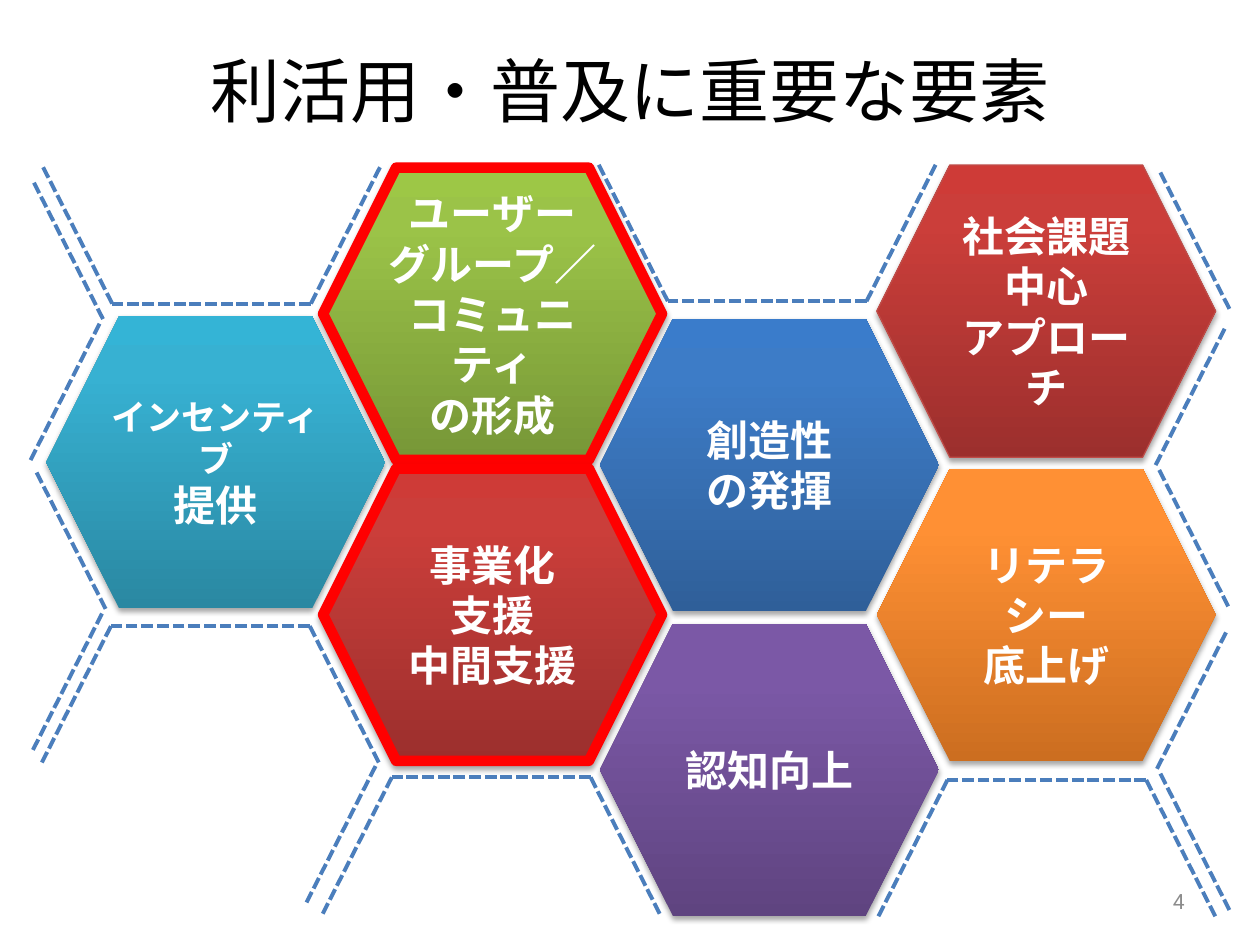
from copy import deepcopy
from dataclasses import dataclass

from lxml.etree import SubElement
from pptx import Presentation
from pptx.dml.color import RGBColor
from pptx.enum.dml import MSO_LINE
from pptx.enum.shapes import MSO_CONNECTOR, MSO_SHAPE
from pptx.enum.text import MSO_ANCHOR, PP_ALIGN
from pptx.oxml.ns import qn
from pptx.util import Pt


@dataclass(frozen=True)
class Theme:
    """Colours, gradients and type sizes of the slide."""
    font: str = "Roboto"
    title_size: int = 40
    body_size: int = 24
    small_size: int = 20
    number_size: int = 12
    black: str = "000000"
    white: str = "FFFFFF"
    grey: str = "8C8C8C"
    dash: str = "4B7EBC"
    highlight: str = "FF0000"
    edge: str = "BF4C48"
    green: tuple = ("779737", "9BC348", "9DC746")
    blue: tuple = ("2F5F99", "3D7CC7", "3A7CCB")
    red: tuple = ("9C2F2D", "CB3E3A", "CE3B37")
    purple: tuple = ("5F4480", "7B58A6", "7C57A8")
    teal: tuple = ("2A88A2", "37B1D2", "34B4D6")
    orange: tuple = ("CC6E20", "FF9034", "FF9136")


THEME = Theme()
HEXAGON_WIDTH, HEXAGON_HEIGHT = 193.7, 167
FIRST_COLUMN, COLUMN_PITCH = 26.4, 158.2
SLANT_WIDTH, SLANT_HEIGHT, FLAT_WIDTH = 40, 79, 113.6

HEXAGONS = [
    (1, 95.8, THEME.green, (THEME.highlight, 6), ["ユーザーグループ／", "コミュニティ\vの形成"]),
    (2, 182.2, THEME.blue, None, ["創造性\vの発揮"]),
    (1, 267.8, THEME.red, (THEME.highlight, 6), ["事業化\v支援\v中間支援"]),
    (2, 356.4, THEME.purple, None, ["認知向上"]),
    (0, 180.7, THEME.teal, None, ["インセンティブ", "提供"]),
    (3, 267.8, THEME.orange, None, ["リテラシー\v底上げ"]),
    (3, 94.3, THEME.red, (THEME.edge, 0.75), ["社会課題\v中心\vアプローチ"]),
]
OPEN_CELLS = [
    (223.9, 444.2, 1), (541.4, 445.7, 1), (63.4, 357.8, 1),
    (64.1, 173.5, -1), (381.6, 172.1, -1),
]
SLANTS = [
    (214.6, 437.8, -1), (700.6, 361.4, -1), (663.1, 442.1, 1),
    (699.8, 187.9, -1), (662.4, 268.6, 1), (20.9, 270, 1),
    (58.3, 350.6, -1), (19.4, 104.4, 1), (56.9, 185, -1), (663.1, 98.6, 1),
]


def write(paragraph, text, size, color, alignment, bold=False):
    """Fill one paragraph and format it."""
    paragraph.text = text
    paragraph.alignment = alignment
    font = paragraph.font
    font.name, font.size, font.bold = THEME.font, Pt(size), bold
    font.color.rgb = RGBColor.from_string(color)


def place(shape, left, top, width, height):
    """Move and size a shape."""
    shape.left, shape.top = Pt(left), Pt(top)
    shape.width, shape.height = Pt(width), Pt(height)


def add_title(slide, text):
    """Format the title placeholder."""
    place(slide.shapes.title, 36, 25.2, 648, 51.8)
    frame = slide.shapes.title.text_frame
    frame.vertical_anchor = MSO_ANCHOR.MIDDLE
    write(frame.paragraphs[0], text, THEME.title_size, THEME.black, PP_ALIGN.CENTER)


def fill_gradient(shape, colors):
    """Fill a shape with a three-stop gradient running upwards."""
    shape.fill.gradient()
    shape.fill.gradient_angle = 90
    stops = shape._element.spPr.find(qn("a:gradFill")).find(qn("a:gsLst"))
    stops.append(deepcopy(stops[-1]))
    for stop, position, color in zip(shape.fill.gradient_stops, (0, 0.8, 1), colors):
        stop.position = position
        stop.color.rgb = RGBColor.from_string(color)


def add_shadow(shape):
    """Give a shape a soft shadow below it."""
    shape.shadow.inherit = False
    effects = shape._element.spPr.find(qn("a:effectLst"))
    shadow = SubElement(effects, qn("a:outerShdw"), blurRad=str(Pt(3.1)),
                        dist=str(Pt(1.8)), dir="5400000", rotWithShape="0")
    color = SubElement(shadow, qn("a:srgbClr"), val=THEME.black)
    SubElement(color, qn("a:alpha"), val="35000")


def add_hexagon(shapes, column, top, colors, outline, texts):
    """Add one labelled cell of the honeycomb."""
    left = FIRST_COLUMN + COLUMN_PITCH * column
    shape = shapes.add_shape(MSO_SHAPE.HEXAGON, Pt(left), Pt(top),
                             Pt(HEXAGON_WIDTH), Pt(HEXAGON_HEIGHT))
    fill_gradient(shape, colors)
    add_shadow(shape)
    if outline:
        color, width = outline
        shape.line.color.rgb = RGBColor.from_string(color)
        shape.line.width = Pt(width)
    else:
        shape.line.fill.background()
    frame = shape.text_frame
    frame.word_wrap = True
    frame.vertical_anchor = MSO_ANCHOR.MIDDLE
    is_incentive = column == 0
    if is_incentive:
        frame.margin_left = frame.margin_right = Pt(2.88)
    for index, text in enumerate(texts):
        paragraph = frame.add_paragraph() if index else frame.paragraphs[0]
        size = THEME.small_size if is_incentive and index == 0 else THEME.body_size
        write(paragraph, text, size, THEME.white, PP_ALIGN.CENTER, bold=True)


def add_dash(shapes, start_x, start_y, end_x, end_y):
    """Add one dashed line."""
    line = shapes.add_connector(MSO_CONNECTOR.STRAIGHT, Pt(start_x), Pt(start_y),
                                Pt(end_x), Pt(end_y))
    line.line.color.rgb = RGBColor.from_string(THEME.dash)
    line.line.width = Pt(2.25)
    line.line.dash_style = MSO_LINE.SQUARE_DOT
    SubElement(line._element.spPr, qn("a:effectLst"))


def add_open_cell(shapes, left, y, direction):
    """Add a flat edge with two arms, down for 1 and up for -1."""
    right = left + FLAT_WIDTH
    arm_y = y + direction * SLANT_HEIGHT
    add_dash(shapes, left, y, left - SLANT_WIDTH, arm_y)
    add_dash(shapes, right, y, left, y)
    add_dash(shapes, right, y, right + SLANT_WIDTH, arm_y)


def add_slide_number(slide, text):
    """Add the slide number."""
    box = slide.shapes.add_textbox(Pt(516.2), Pt(500.4), Pt(167.8), Pt(28.8))
    box.text_frame.word_wrap = True
    box.text_frame.vertical_anchor = MSO_ANCHOR.MIDDLE
    write(box.text_frame.paragraphs[0], text, THEME.number_size, THEME.grey, PP_ALIGN.RIGHT)


def main():
    """Build and save the slide."""
    presentation = Presentation()
    presentation.slide_width, presentation.slide_height = Pt(720), Pt(540)
    slide = presentation.slides.add_slide(presentation.slide_layouts[5])
    add_title(slide, "利活用・普及に重要な要素")
    honeycomb = slide.shapes.add_group_shape()
    for hexagon in HEXAGONS:
        add_hexagon(honeycomb.shapes, *hexagon)
    for open_cell in OPEN_CELLS:
        add_open_cell(slide.shapes.add_group_shape().shapes, *open_cell)
    for x, y, direction in SLANTS:
        add_dash(slide.shapes, x, y, x + direction * SLANT_WIDTH, y + SLANT_HEIGHT)
    add_slide_number(slide, "4")
    presentation.save("out.pptx")


if __name__ == "__main__":
    main()
